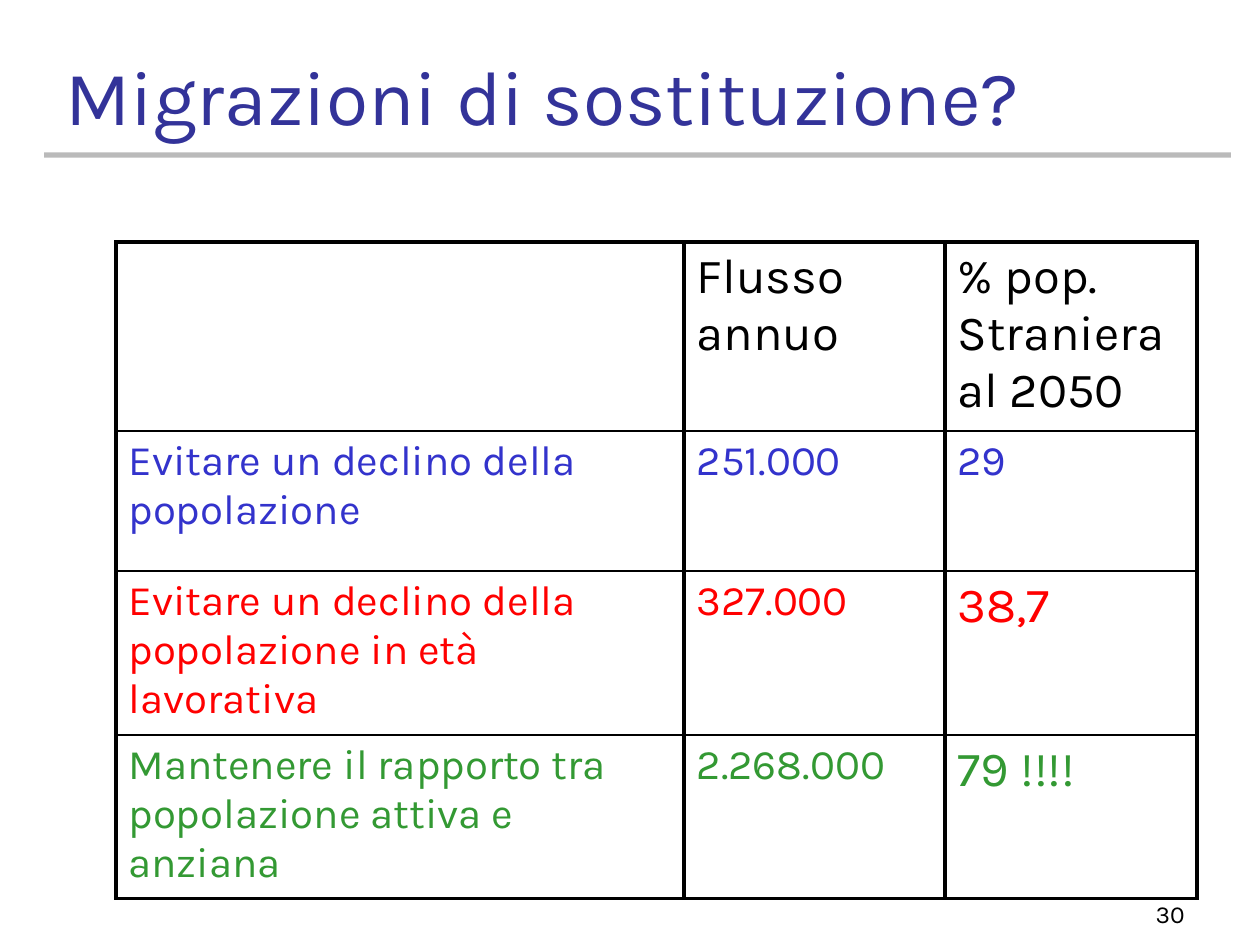
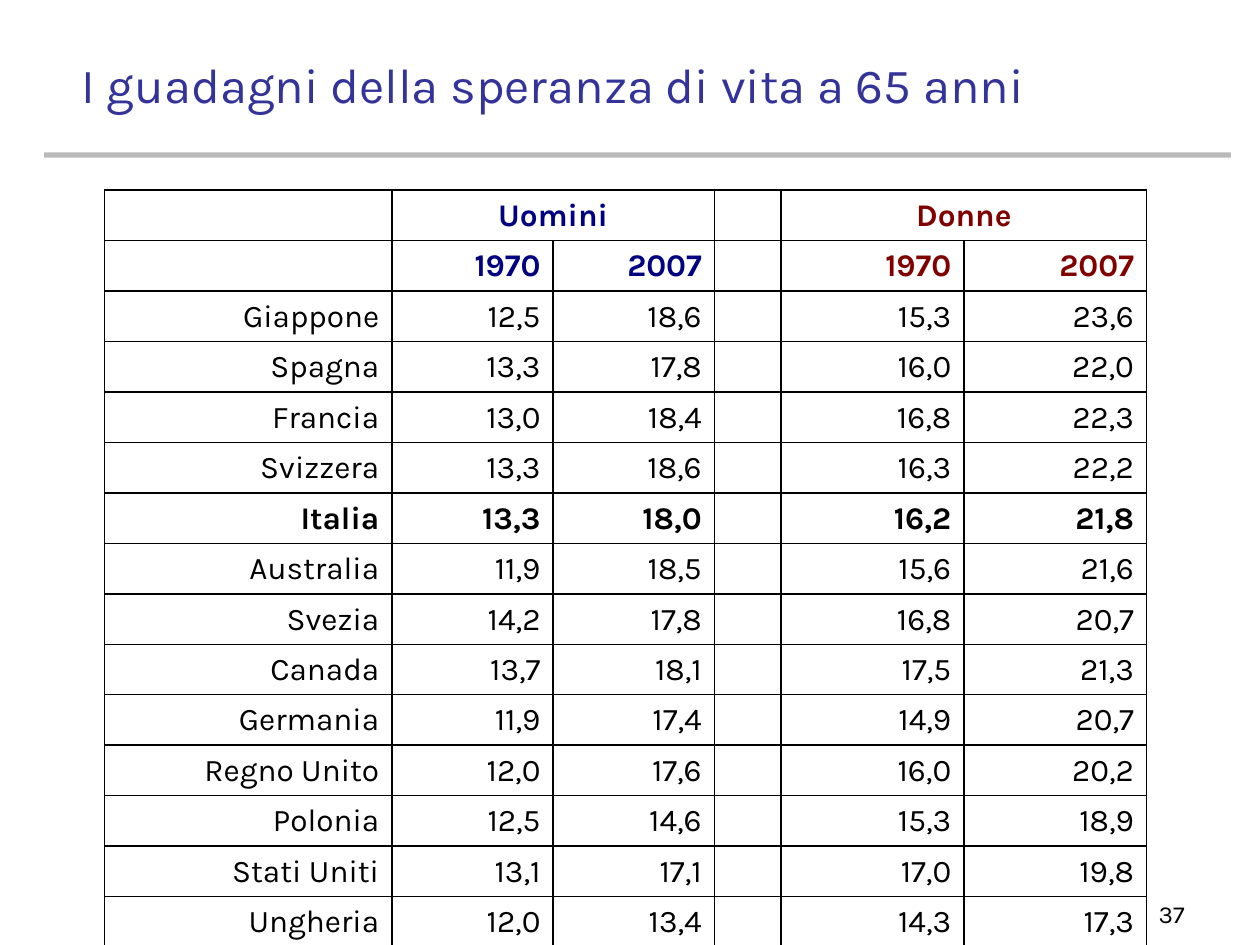
from dataclasses import dataclass

from lxml.etree import SubElement
from pptx import Presentation
from pptx.dml.color import RGBColor
from pptx.enum.shapes import MSO_CONNECTOR
from pptx.enum.text import MSO_ANCHOR, PP_ALIGN
from pptx.oxml.ns import qn
from pptx.util import Inches, Pt


@dataclass(frozen=True)
class Theme:
    font: str = "Karla"
    black: str = "000000"
    title: str = "333399"
    rule: str = "777777"
    blue: str = "3333CC"
    red: str = "FF0000"
    green: str = "339933"
    men: str = "000080"
    women: str = "800000"
    huge: int = 44
    large: int = 28
    medium: int = 24
    body: int = 18
    small: int = 14
    thick: float = 2.25
    thin: float = 1


THEME = Theme()


def write(frame, text, size=THEME.body, color=THEME.black, bold=False, align=PP_ALIGN.LEFT):
    """Fill the first paragraph; an empty one still keeps its type size."""
    para = frame.paragraphs[0]
    para.alignment = align
    if not text:
        SubElement(para._p, qn("a:endParaRPr"), sz=str(size * 100))
        return
    run = para.add_run()
    run.text = text
    font = run.font
    font.name, font.size, font.bold = THEME.font, Pt(size), bold
    font.color.rgb = RGBColor.from_string(color)


def edge(cell, left, right, top, bottom):
    """Set the four border widths of a cell, in points."""
    props = cell._tc.get_or_add_tcPr()
    for side, width in zip("LRTB", (left, right, top, bottom)):
        line = SubElement(props, qn(f"a:ln{side}"), w=str(Pt(width)))
        fill = SubElement(line, qn("a:solidFill"))
        SubElement(fill, qn("a:srgbClr"), val=THEME.black)


class Deck:
    def __init__(self, theme):
        self.theme = theme
        self.file = Presentation()
        self.file.slide_width, self.file.slide_height = Inches(10), Inches(7.5)
        self.slide = None

    def page(self, number, title, box, size):
        """Start a slide with its rule, number and title."""
        self.slide = self.file.slides.add_slide(self.file.slide_layouts[6])
        self.rule()
        self.text(str(number), (7.42, 6.92, 2.08, 0.5),
                  size=self.theme.small, align=PP_ALIGN.RIGHT)
        self.text(title, box, size=size, color=self.theme.title)

    def rule(self):
        y = Inches(1.23)
        rule = self.slide.shapes.add_connector(
            MSO_CONNECTOR.STRAIGHT, Inches(0.35), y, Inches(9.77), y)
        rule.line.width = Pt(3)
        rule.line.color.rgb = RGBColor.from_string(self.theme.rule)
        props = rule._element.spPr
        color = props.find(".//" + qn("a:srgbClr"))
        SubElement(color, qn("a:alpha"), val="50000")
        SubElement(props, qn("a:effectLst"))

    def text(self, text, box, **style):
        frame = self.slide.shapes.add_textbox(*map(Inches, box)).text_frame
        frame.word_wrap = True
        frame.vertical_anchor = MSO_ANCHOR.BOTTOM
        write(frame, text, **style)

    def table(self, rows, spot, widths, heights, look, edges, anchor):
        """Build a table; look and edges give text style and borders by row and column."""
        size = (sum(widths), sum(heights))
        table = self.slide.shapes.add_table(
            len(rows), len(widths), *map(Inches, spot + size)).table
        table.first_row = table.horz_banding = False
        for col, width in zip(table.columns, widths):
            col.width = Inches(width)
        for row, height in zip(table.rows, heights):
            row.height = Inches(height)
        for r, row in enumerate(rows):
            for c, text in enumerate(row):
                cell = table.cell(r, c)
                cell.vertical_anchor = anchor
                write(cell.text_frame, text, **look(r, c))
                edge(cell, *edges(r))
                cell.fill.background()
        return table


FLOWS = [
    ("", "Flusso annuo", "% pop. Straniera al 2050"),
    ("Evitare un declino della popolazione", "251.000", "29"),
    ("Evitare un declino della popolazione in età lavorativa", "327.000", "38,7"),
    ("Mantenere il rapporto tra popolazione attiva e anziana", "2.268.000", "79 !!!!"),
]

GAINS = [
    ("", "Uomini", "", "", "Donne", ""),
    ("", "1970", "2007", "", "1970", "2007"),
    ("Giappone", "12,5", "18,6", "", "15,3", "23,6"),
    ("Spagna", "13,3", "17,8", "", "16,0", "22,0"),
    ("Francia", "13,0", "18,4", "", "16,8", "22,3"),
    ("Svizzera", "13,3", "18,6", "", "16,3", "22,2"),
    ("Italia", "13,3", "18,0", "", "16,2", "21,8"),
    ("Australia", "11,9", "18,5", "", "15,6", "21,6"),
    ("Svezia", "14,2", "17,8", "", "16,8", "20,7"),
    ("Canada", "13,7", "18,1", "", "17,5", "21,3"),
    ("Germania", "11,9", "17,4", "", "14,9", "20,7"),
    ("Regno Unito", "12,0", "17,6", "", "16,0", "20,2"),
    ("Polonia", "12,5", "14,6", "", "15,3", "18,9"),
    ("Stati Uniti", "13,1", "17,1", "", "17,0", "19,8"),
    ("Ungheria", "12,0", "13,4", "", "14,3", "17,3"),
]


def flows(deck):
    theme = deck.theme
    colors = (theme.black, theme.blue, theme.red, theme.green)
    last = len(FLOWS) - 1

    def look(r, c):
        large = r == 0 or (c == 2 and r > 1)
        return {"size": theme.large if large else theme.medium, "color": colors[r]}

    def edges(r):
        top = theme.thick if r == 0 else theme.thin
        bottom = theme.thick if r == last else theme.thin
        return theme.thick, theme.thick, top, bottom

    deck.page(30, "Migrazioni di sostituzione?", (0.42, 0.5, 8.52, 0.67), theme.huge)
    deck.table(FLOWS, (0.92, 1.92), (4.51, 2.07, 2), (1.46, 1.11, 1.27, 1.27),
               look, edges, MSO_ANCHOR.TOP)


def gains(deck):
    theme = deck.theme

    def look(r, c):
        head = r < 2
        color = (theme.men if c < 3 else theme.women) if head else theme.black
        return {"color": color, "bold": head or GAINS[r][0] == "Italia",
                "align": PP_ALIGN.CENTER if r == 0 else PP_ALIGN.RIGHT}

    deck.page(37, "I guadagni della speranza di vita a 65 anni",
              (0.55, 0.57, 8.12, 0.38), theme.large)
    table = deck.table(GAINS, (0.83, 1.51), (2.28, 1.28, 1.28, 0.53, 1.45, 1.45),
                       [0.39] * len(GAINS), look, lambda r: [theme.thin] * 4,
                       MSO_ANCHOR.BOTTOM)
    for c in (1, 4):
        table.cell(0, c).merge(table.cell(0, c + 1))


def main():
    deck = Deck(THEME)
    flows(deck)
    gains(deck)
    deck.file.save("out.pptx")


if __name__ == "__main__":
    main()
